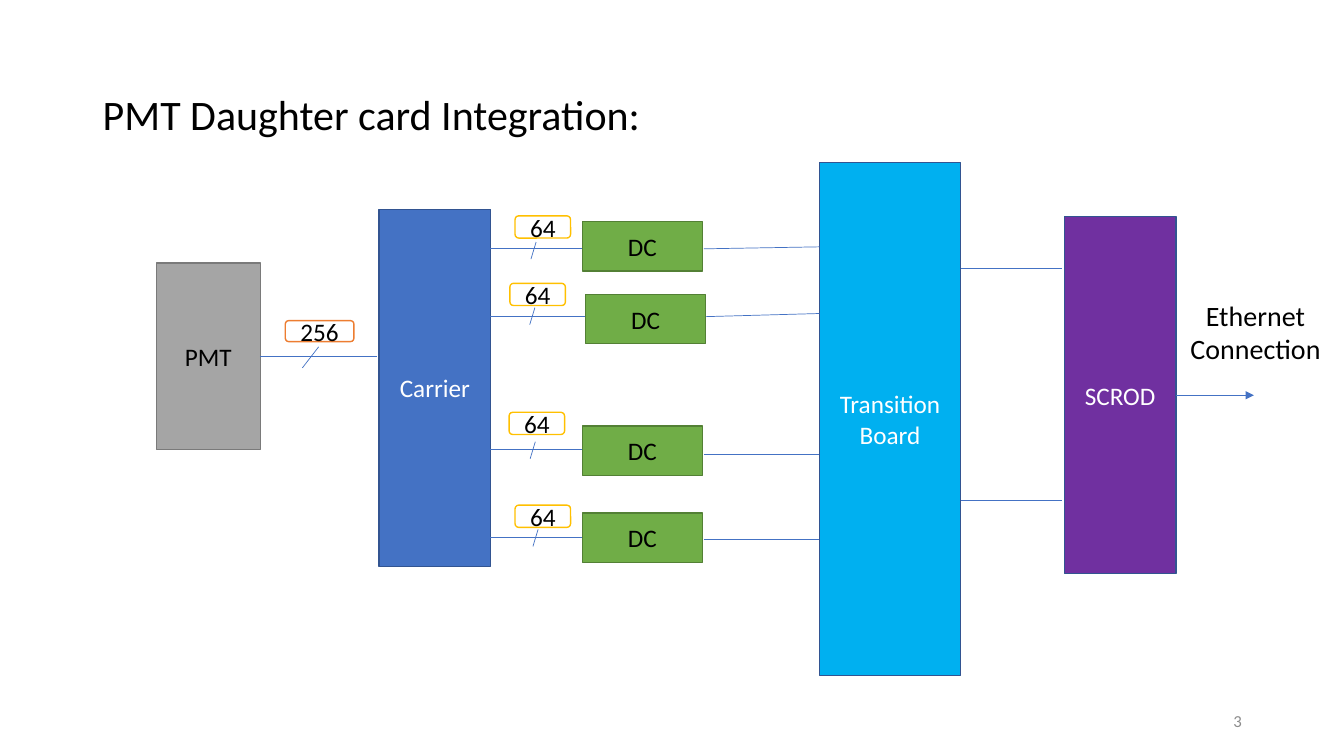
from lxml import etree
from pptx import Presentation
from pptx.dml.color import RGBColor
from pptx.enum.shapes import MSO_CONNECTOR, MSO_SHAPE
from pptx.enum.text import MSO_ANCHOR, PP_ALIGN
from pptx.oxml.ns import qn
from pptx.util import Cm, Pt

RECTANGLE = MSO_SHAPE.RECTANGLE
ROUNDED = MSO_SHAPE.ROUNDED_RECTANGLE
STRAIGHT = MSO_CONNECTOR.STRAIGHT
MIDDLE, TOP = MSO_ANCHOR.MIDDLE, MSO_ANCHOR.TOP
LEFT, CENTER, RIGHT = PP_ALIGN.LEFT, PP_ALIGN.CENTER, PP_ALIGN.RIGHT

BLACK = RGBColor(0x00, 0x00, 0x00)
WHITE = RGBColor(0xFF, 0xFF, 0xFF)
GRAY = RGBColor(0xA5, 0xA5, 0xA5)
DARK_GRAY = RGBColor(0x7A, 0x7A, 0x7A)
NUMBER_GRAY = RGBColor(0x8C, 0x8C, 0x8C)
BLUE = RGBColor(0x44, 0x72, 0xC4)
DARK_BLUE = RGBColor(0x32, 0x54, 0x91)
SKY_BLUE = RGBColor(0x00, 0xB0, 0xF0)
GREEN = RGBColor(0x70, 0xAD, 0x47)
DARK_GREEN = RGBColor(0x53, 0x80, 0x35)
PURPLE = RGBColor(0x70, 0x30, 0xA0)
ORANGE = RGBColor(0xED, 0x7D, 0x31)
GOLD = RGBColor(0xFF, 0xC0, 0x00)

presentation = Presentation()
presentation.slide_width = Cm(33.87)
presentation.slide_height = Cm(19.05)
slide = presentation.slides.add_slide(presentation.slide_layouts[6])


def add_block(text, bounds, fill, outline, color=BLACK, kind=RECTANGLE):
    """Add a filled, outlined shape with a centred label; bounds are in cm."""
    shape = slide.shapes.add_shape(kind, *map(Cm, bounds))
    shape.shadow.inherit = False
    shape.fill.solid()
    shape.fill.fore_color.rgb = fill
    shape.line.color.rgb = outline
    shape.line.width = Pt(1)
    shape.text_frame.text = text
    shape.text_frame.word_wrap = True
    shape.text_frame.vertical_anchor = MIDDLE
    paragraph = shape.text_frame.paragraphs[0]
    paragraph.alignment = CENTER
    font = paragraph.runs[0].font
    font.name, font.size, font.color.rgb = "Calibri", Pt(18), color


def add_wire(x1, y1, x2, y2):
    """Add a thin blue line between two points in cm."""
    wire = slide.shapes.add_connector(STRAIGHT, Cm(x1), Cm(y1), Cm(x2), Cm(y2))
    wire.line.color.rgb = BLUE
    wire.line.width = Pt(0.5)
    etree.SubElement(wire._element.spPr, qn("a:effectLst"))
    return wire


# Main boards
add_block("PMT", (3.94, 6.63, 2.62, 4.7), GRAY, DARK_GRAY)
add_block("Carrier", (9.55, 5.28, 2.82, 8.99), BLUE, DARK_BLUE, WHITE)
add_block("Transition Board", (20.65, 4.09, 3.56, 12.93), SKY_BLUE, DARK_BLUE, WHITE)
add_block("SCROD", (26.82, 5.46, 2.82, 8.99), PURPLE, DARK_BLUE, WHITE)

# PMT to carrier bus
add_wire(6.55, 8.99, 9.5, 8.99)
add_wire(8.03, 8.74, 7.62, 9.27)
add_block("256", (7.19, 8.08, 1.73, 0.53), WHITE, ORANGE, kind=ROUNDED)

# Daughter cards: card left and top, label left and top, slash left and top,
# input height, output start and end heights
daughter_cards = [
    (14.68, 5.59, 12.98, 5.44, 13.38, 6.1, 6.27, 6.27, 6.22),
    (14.76, 7.42, 12.85, 7.14, 13.35, 7.75, 7.98, 7.98, 7.9),
    (14.68, 10.74, 12.83, 10.39, 13.36, 11.13, 11.33, 11.46, 11.46),
    (14.68, 12.93, 12.98, 12.73, 13.43, 13.34, 13.54, 13.59, 13.59),
]
for (card_x, card_y, label_x, label_y, slash_x, slash_y,
     input_y, output_y, board_y) in daughter_cards:
    add_wire(12.35, input_y, card_x, input_y)
    add_wire(slash_x + 0.13, slash_y, slash_x, slash_y + 0.43)
    add_wire(17.74, output_y, 20.65, board_y)
    add_block("DC", (card_x, card_y, 3.02, 1.24), GREEN, DARK_GREEN)
    add_block("64", (label_x, label_y, 1.4, 0.56), WHITE, GOLD, kind=ROUNDED)

# Transition board to SCROD, then out to Ethernet
for link_y in (6.76, 12.62):
    add_wire(24.21, link_y, 26.77, link_y)
ethernet_arrow = add_wire(29.64, 9.96, 31.6, 9.96)
etree.SubElement(ethernet_arrow.line._get_or_add_ln(), qn("a:tailEnd"), type="triangle")

# Title, Ethernet label and slide number
captions = [
    ("PMT Daughter card Integration:", (2.34, 1.02, 29.21, 3.68), 30, BLACK, LEFT, MIDDLE),
    ("Ethernet Connection", (29.67, 7.39, 3.94, 1.96), 20, BLACK, CENTER, TOP),
    ("3", (23.93, 17.65, 7.62, 1.02), 12, NUMBER_GRAY, RIGHT, MIDDLE),
]
for text, bounds, size, color, alignment, anchor in captions:
    text_frame = slide.shapes.add_textbox(*map(Cm, bounds)).text_frame
    text_frame.word_wrap = True
    text_frame.vertical_anchor = anchor
    text_frame.text = text
    paragraph = text_frame.paragraphs[0]
    paragraph.alignment = alignment
    font = paragraph.runs[0].font
    font.name, font.size, font.color.rgb = "Calibri", Pt(size), color

presentation.save("out.pptx")
